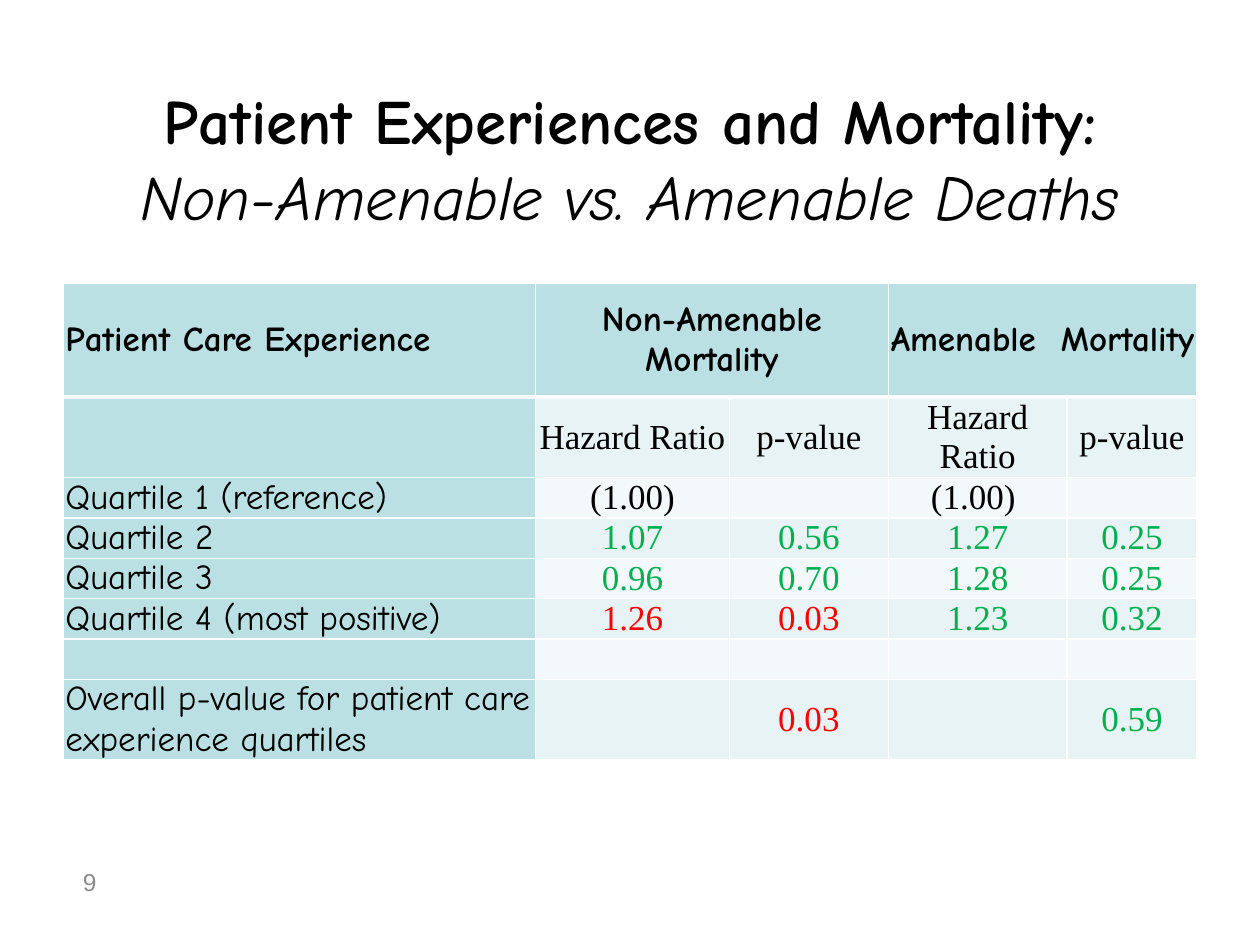
from dataclasses import dataclass

import pptx
import pptx.dml.color
import pptx.enum.text
import pptx.oxml
import pptx.oxml.ns
import pptx.util
from pptx.util import Inches

RGB = pptx.dml.color.RGBColor.from_string
ALIGN = pptx.enum.text.PP_ALIGN
MIDDLE = pptx.enum.text.MSO_ANCHOR.MIDDLE


@dataclass(frozen=True)
class Theme:
    heading_font: str = "Comic Neue"
    value_font: str = "Times New Roman"
    number_font: str = "Arial"
    title_size: int = 36
    table_size: int = 20
    number_size: int = 14
    text: str = "000000"
    muted: str = "8C8C8C"
    good: str = "00B050"
    bad: str = "FF0000"
    header_fill: str = "BBE0E3"
    bands: tuple[str, str] = ("E7F3F4", "F3F9FA")
    border: str = "FFFFFF"


@dataclass(frozen=True)
class Row:
    height: float
    label: str
    values: tuple[str, str, str, str] = ("", "", "", "")
    colors: tuple[str, str] = (Theme.text, Theme.text)  # one per mortality group


THEME = Theme()
COLUMN_WIDTHS = (3.75, 1.54, 1.26, 1.42, 1.03)
GOOD = (THEME.good, THEME.good)
MIXED = (THEME.bad, THEME.good)
ROWS = (
    Row(0.9, "Patient Care Experience",
        ("Non-Amenable Mortality", "", "Amenable  Mortality", "")),
    Row(0.64, "", ("Hazard Ratio", "p-value", "Hazard Ratio", "p-value")),
    Row(0.32, "Quartile 1 (reference)", ("(1.00)", "", "(1.00) ", "")),
    Row(0.32, "Quartile 2", ("1.07", "0.56", "1.27", "0.25"), GOOD),
    Row(0.32, "Quartile 3", ("0.96", "0.70", "1.28", "0.25"), GOOD),
    Row(0.32, "Quartile 4 (most positive)", ("1.26", "0.03", "1.23", "0.32"), MIXED),
    Row(0.32, ""),
    Row(0.64, "Overall p-value for patient care experience quartiles",
        ("", "0.03", "", "0.59"), MIXED),
)


def set_font(font, name: str, size: int, color: str, bold: bool = False) -> None:
    font.name, font.size, font.bold = name, pptx.util.Pt(size), bold
    font.color.rgb = RGB(color)


def set_borders(cell, bottom: int = 1) -> None:
    """Outline a cell; borders must precede the fill in the cell properties."""
    tc_pr = cell._tc.get_or_add_tcPr()
    for i, (side, width) in enumerate((("L", 1), ("R", 1), ("T", 1), ("B", bottom))):
        tc_pr.insert(i, pptx.oxml.parse_xml(
            f'<a:ln{side} {pptx.oxml.ns.nsdecls("a")} w="{pptx.util.Pt(width)}">'
            f'<a:solidFill><a:srgbClr val="{THEME.border}"/></a:solidFill></a:ln{side}>'))


def format_cell(cell, text: str, font: str, color: str, fill: str,
                align, header: bool) -> None:
    cell.fill.solid()
    cell.fill.fore_color.rgb = RGB(fill)
    cell.vertical_anchor = MIDDLE
    cell.margin_left = cell.margin_right = Inches(0.02)
    cell.margin_top = cell.margin_bottom = 0
    p = cell.text_frame.paragraphs[0]
    p.text, p.alignment = text, align
    set_font(p.font, font, THEME.table_size, color, header)
    set_borders(cell, bottom=3 if header else 1)


def add_title(slide) -> None:
    sp = slide.shapes.title
    sp.left, sp.top, sp.width, sp.height = 0, Inches(0.75), Inches(10), Inches(1)
    tf = sp.text_frame
    tf.vertical_anchor = MIDDLE
    p = tf.paragraphs[0]
    p.alignment = ALIGN.CENTER
    set_font(p.font, THEME.heading_font, THEME.title_size, THEME.text)
    r = p.add_run()
    r.text, r.font.bold = "Patient Experiences and Mortality:", True
    p.add_line_break()
    r = p.add_run()
    r.text, r.font.italic = "Non-Amenable vs. Amenable Deaths", True


def add_mortality_table(slide) -> None:
    table = slide.shapes.add_table(
        len(ROWS), len(COLUMN_WIDTHS), Inches(0.5), Inches(2.25),
        Inches(sum(COLUMN_WIDTHS)), Inches(sum(row.height for row in ROWS))).table
    for column, width in zip(table.columns, COLUMN_WIDTHS):
        column.width = Inches(width)
    for i, row in enumerate(ROWS):
        table.rows[i].height = Inches(row.height)
        header = i == 0
        format_cell(table.cell(i, 0), row.label, THEME.heading_font, THEME.text,
                    THEME.header_fill, ALIGN.LEFT, header)
        font = THEME.heading_font if header else THEME.value_font
        fill = THEME.header_fill if header else THEME.bands[(i - 1) % 2]
        for j, value in enumerate(row.values):
            format_cell(table.cell(i, j + 1), value, font, row.colors[j // 2],
                        fill, ALIGN.CENTER, header)
    for j in (1, 3):
        table.cell(0, j).merge(table.cell(0, j + 1))


def add_slide_number(slide, number: int) -> None:
    tf = slide.shapes.add_textbox(
        Inches(0.56), Inches(6.83), Inches(2.62), Inches(0.52)).text_frame
    tf.word_wrap = True
    p = tf.paragraphs[0]
    p.text = str(number)
    set_font(p.font, THEME.number_font, THEME.number_size, THEME.muted)


def main() -> None:
    prs = pptx.Presentation()
    prs.slide_width, prs.slide_height = Inches(10), Inches(7.5)
    slide = prs.slides.add_slide(prs.slide_layouts.get_by_name("Title Only"))
    add_title(slide)
    add_mortality_table(slide)
    add_slide_number(slide, 9)
    prs.save("out.pptx")


if __name__ == "__main__":
    main()
